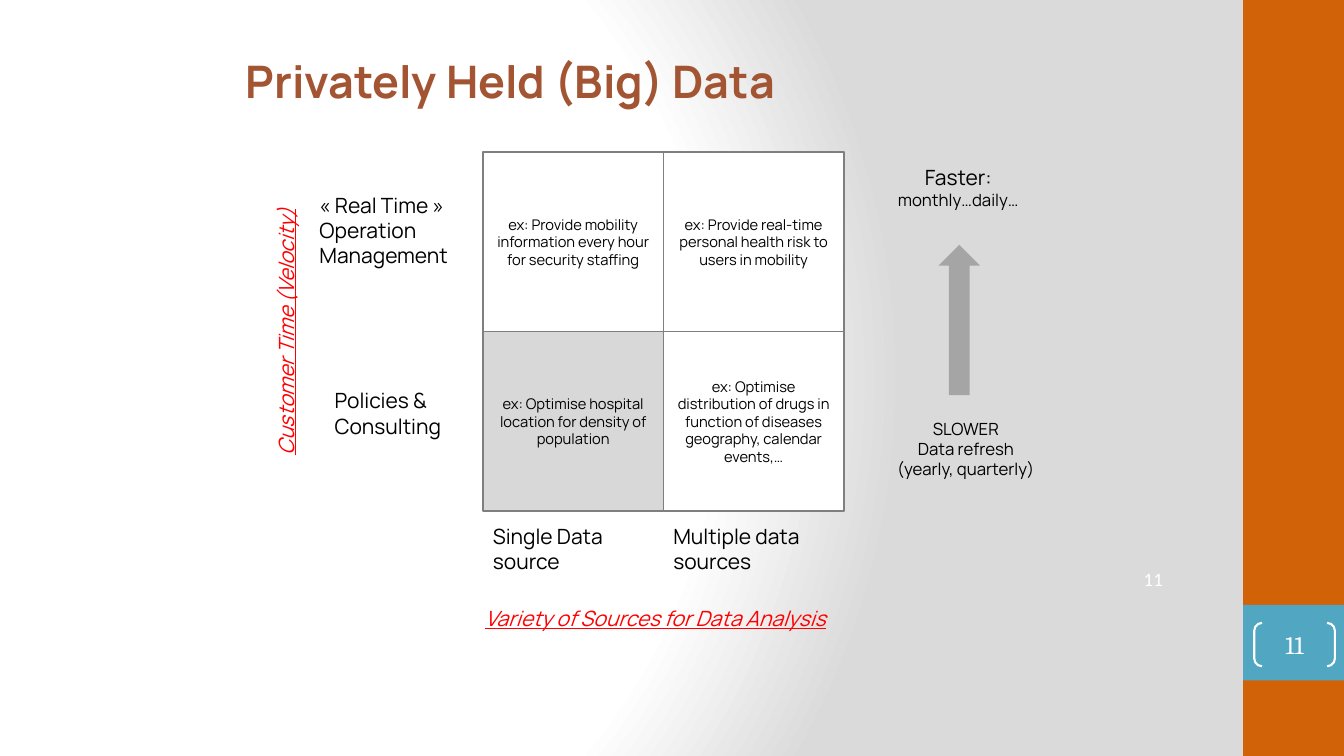
from dataclasses import dataclass

from lxml import etree
from pptx import Presentation
from pptx import util as u
from pptx.dml import color
from pptx.enum import shapes, text
from pptx.oxml import ns
from pptx.slide import Slide

BLACK, WHITE, RED, GREY = "000000", "FFFFFF", "FF0000", "7F7F7F"
KIND = shapes.MSO_SHAPE
LEFT, MID = text.PP_ALIGN.LEFT, text.PP_ALIGN.CENTER
TOP, CENTER = text.MSO_ANCHOR.TOP, text.MSO_ANCHOR.MIDDLE
Box = tuple[float, float, float, float]


@dataclass
class Style:
    size: float = 15
    tint: str = BLACK
    font: str = "Manrope"
    align: text.PP_ALIGN = LEFT
    anchor: text.MSO_ANCHOR = TOP
    bold: bool = False
    axis: bool = False  # italic and underlined
    inset: tuple[float, float] = (0.1, 0.05)


@dataclass
class Label:
    words: str
    box: Box
    style: Style
    turn: float = 0


@dataclass
class Form:
    kind: shapes.MSO_SHAPE
    box: Box
    fill: str | None = None
    line: str | None = None
    width: float = 1
    words: str = ""
    style: Style | None = None
    adjust: float | None = None


def rgb(code: str) -> color.RGBColor:
    return color.RGBColor.from_string(code)


def write(shape, words: str, style: Style) -> None:
    frame = shape.text_frame
    frame.text = words
    frame.word_wrap = True
    frame.vertical_anchor = style.anchor
    side, edge = map(u.Inches, style.inset)
    frame.margin_left = frame.margin_right = side
    frame.margin_top = frame.margin_bottom = edge
    for para in frame.paragraphs:
        para.alignment = style.align
        for run in para.runs:
            font = run.font
            font.name, font.size = style.font, u.Pt(style.size)
            font.color.rgb = rgb(style.tint)
            font.bold = style.bold
            font.italic = font.underline = style.axis


def label(slide: Slide, item: Label):
    shape = slide.shapes.add_textbox(*map(u.Inches, item.box))
    shape.rotation = item.turn
    write(shape, item.words, item.style)
    return shape


def draw(slide: Slide, item: Form) -> None:
    shape = slide.shapes.add_shape(item.kind, *map(u.Inches, item.box))
    shape.shadow.inherit = False
    if item.fill:
        shape.fill.solid()
        shape.fill.fore_color.rgb = rgb(item.fill)
    else:
        shape.fill.background()
    if item.line:
        shape.line.color.rgb = rgb(item.line)
        shape.line.width = u.Pt(item.width)
    else:
        shape.line.fill.background()
    if item.adjust is not None:
        shape.adjustments[0] = item.adjust
    if item.style:
        write(shape, item.words, item.style)


def backdrop(slide: Slide) -> None:
    slide.background.fill.solid()
    props = slide.element.find(".//" + ns.qn("p:bgPr"))
    stops = "".join(
        f'<a:gs pos="{pos * 1000}"><a:srgbClr val="{code}"/></a:gs>'
        for pos, code in ((0, WHITE), (75, WHITE), (100, "DADADA"))
    )
    props.replace(props[0], etree.fromstring(
        f'<a:gradFill {ns.nsdecls("a")} rotWithShape="1"><a:gsLst>{stops}</a:gsLst>'
        '<a:path path="circle"><a:fillToRect l="20000" t="50000" r="100000" b="50000"/>'
        '</a:path></a:gradFill>'
    ))


CELL = Style(10.5, align=MID, anchor=CENTER)
SIDE = Style()
AXIS = Style(tint=RED, axis=True)
TURNED = Style(tint=RED, axis=True, align=MID)
NOTE = Style(12, align=MID)
TITLE = Style(32, "A35533", anchor=CENTER, bold=True)
SMALL = Style(13.5, WHITE, "Calibri")
PAGE = Style(18, WHITE, "Cambria", MID, CENTER, inset=(0, 0))

# Matrix geometry
COLS, ROWS = (4.79, 6.58), (1.51, 3.29)
WIDE, HIGH = 1.79, 1.78

CELLS = (
    ("ex: Provide mobility information every hour for security staffing",
     "ex: Provide real-time personal health risk to users in mobility"),
    ("ex: Optimise hospital location for density of population",
     "ex: Optimise distribution of drugs in function of diseases geography, "
     "calendar events,…"),
)

BANDS = (
    Form(KIND.RECTANGLE, (12.33, 0, 1, 7.5), "D16207"),
    Form(KIND.RECTANGLE, (12.33, 6, 1, 0.75), "51A6C2"),
)

LABELS = (
    Label("« Real Time »\nOperation\nManagement", (3.07, 1.86, 1.82, 1.23), SIDE),
    Label("Policies &\nConsulting", (3.22, 3.8, 1.51, 0.87), SIDE),
    Label("Single Data\nsource", (COLS[0], 5.14, 1.59, 0.87), SIDE),
    Label("Multiple data\nsources", (COLS[1], 5.14, 1.81, 0.87), SIDE),
    Label("Variety of Sources for Data Analysis", (4.71, 5.96, 4.4, 0.51), AXIS),
    Label("Customer Time (Velocity)", (1.12, 3.07, 3.53, 0.45), TURNED, 270),
    Label("SLOWER\nData refresh\n(yearly, quarterly)", (8.71, 4.1, 1.74, 0.88), NOTE),
    Label("Privately Held (Big) Data", (2.34, 0.48, 8.65, 0.64), TITLE),
)

MARKS = (
    Form(KIND.UP_ARROW, (9.31, 2.43, 0.41, 1.49), "A5A5A5"),
    Form(KIND.DOUBLE_BRACKET, (11.23, 5.57, 0.6, 0.33), words="11", style=SMALL),
    Form(KIND.DOUBLE_BRACKET, (12.44, 6.18, 0.8, 0.43), line=WHITE, width=1.5,
         words="11", style=PAGE, adjust=0.18),
)


def main() -> None:
    deck = Presentation()
    deck.slide_width, deck.slide_height = u.Inches(13.33), u.Inches(7.5)
    slide = deck.slides.add_slide(deck.slide_layouts[6])
    backdrop(slide)

    # Side bands
    for band in BANDS:
        draw(slide, band)

    # Two by two matrix, lower left cell shaded
    for row, top in enumerate(ROWS):
        for col, left in enumerate(COLS):
            fill = "D8D8D8" if (row, col) == (1, 0) else WHITE
            draw(slide, Form(KIND.RECTANGLE, (left, top, WIDE, HIGH), fill, GREY,
                             words=CELLS[row][col], style=CELL))

    # Title, axis and speed labels
    for item in LABELS:
        label(slide, item)
    faster = label(slide, Label("Faster:\nmonthly…daily…", (8.65, 1.58, 1.71, 0.69), NOTE))
    faster.text_frame.paragraphs[0].runs[0].font.size = u.Pt(15)

    # Arrow and page numbers
    for mark in MARKS:
        draw(slide, mark)

    deck.save("out.pptx")


if __name__ == "__main__":
    main()
